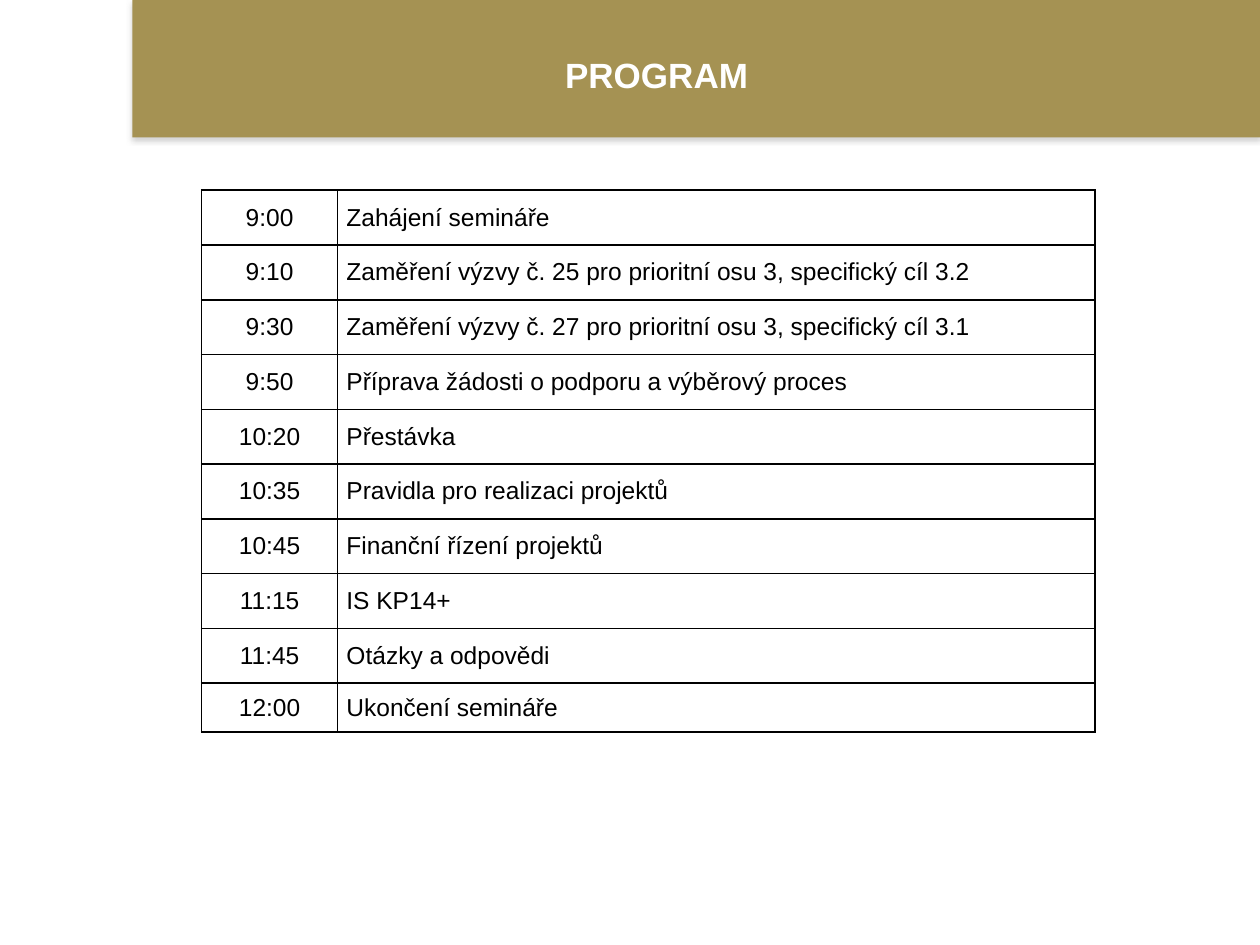
from dataclasses import dataclass

from pptx import Presentation
from pptx.dml.color import RGBColor
from pptx.enum.shapes import MSO_SHAPE
from pptx.enum.text import MSO_ANCHOR, PP_ALIGN
from pptx.oxml import parse_xml
from pptx.util import Inches, Pt

RECT = MSO_SHAPE.RECTANGLE
MID = MSO_ANCHOR.MIDDLE
LEFT, MIDST = PP_ALIGN.LEFT, PP_ALIGN.CENTER
NS = 'xmlns:a="http://schemas.openxmlformats.org/drawingml/2006/main"'


@dataclass(frozen=True)
class Theme:
    """Hold the colours, font and sizes."""
    font: str = "Arial"
    gold: str = "A59253"
    white: str = "FFFFFF"
    ink: str = "000000"
    shade: str = "808080"
    head: int = 20
    body: int = 14
    rule: int = 1


AGENDA = [
    ("9:00", "Zahájení semináře"),
    ("9:10", "Zaměření výzvy č. 25 pro prioritní osu 3, specifický cíl 3.2"),
    ("9:30", "Zaměření výzvy č. 27 pro prioritní osu 3, specifický cíl 3.1"),
    ("9:50", "Příprava žádosti o podporu a výběrový proces"),
    ("10:20", "Přestávka"),
    ("10:35", "Pravidla pro realizaci projektů"),
    ("10:45", "Finanční řízení projektů"),
    ("11:15", "IS KP14+"),
    ("11:45", "Otázky a odpovědi"),
    ("12:00", "Ukončení semináře"),
]


def write(frame, text, font, size, color, bold=False, align=LEFT, lead=None):
    """Put one formatted paragraph into a text frame."""
    para = frame.paragraphs[0]
    para.alignment = align
    if lead:
        para.line_spacing = lead
    run = para.add_run()
    run.text = text
    run.font.name, run.font.size, run.font.bold = font, Pt(size), bold
    run.font.color.rgb = RGBColor.from_string(color)


class Deck:
    """Draw on one slide with a grid of 100 columns by 75 rows."""

    def __init__(self, theme):
        """Open a blank slide."""
        self.theme = theme
        self.show = Presentation()
        self.show.slide_width, self.show.slide_height = Inches(10), Inches(7.5)
        self.slide = self.show.slides.add_slide(self.show.slide_layouts[6])

    def grid(self, *units):
        """Turn grid columns or rows into lengths."""
        return [round(self.show.slide_width * unit / 100) for unit in units]

    def band(self, *box):
        """Draw a gold band with a soft shadow."""
        shape = self.slide.shapes.add_shape(RECT, *self.grid(*box))
        shape.fill.solid()
        shape.fill.fore_color.rgb = RGBColor.from_string(self.theme.gold)
        shape.line.fill.background()
        shape.shadow.inherit = False
        shape.element.spPr[-1].append(parse_xml(
            f'<a:outerShdw {NS} blurRad="{Pt(3.1)}" dist="{Pt(1.8)}" '
            f'dir="5400000" algn="t" rotWithShape="0">'
            f'<a:srgbClr val="{self.theme.shade}"><a:alpha val="35000"/>'
            f'</a:srgbClr></a:outerShdw>'))

    def title(self, text, *box):
        """Write a centred heading."""
        frame = self.slide.shapes.add_textbox(*self.grid(*box)).text_frame
        frame.word_wrap = True
        frame.vertical_anchor = MID
        write(frame, text, self.theme.font, self.theme.head, self.theme.white,
              bold=True, align=MIDST, lead=0.9)

    def cell(self, cell, text, align):
        """Fill, rule and write one table cell."""
        theme = self.theme
        cell.margin_left = cell.margin_right = Inches(0.07)
        cell.margin_top = cell.margin_bottom = 0
        cell.vertical_anchor = MID
        props = cell._tc.get_or_add_tcPr()
        for side in "LRTB":
            props.append(parse_xml(
                f'<a:ln{side} {NS} w="{Pt(theme.rule)}"><a:solidFill>'
                f'<a:srgbClr val="{theme.ink}"/></a:solidFill></a:ln{side}>'))
        cell.fill.solid()
        cell.fill.fore_color.rgb = RGBColor.from_string(theme.white)
        write(cell.text_frame, text, theme.font, theme.body, theme.ink,
              align=align)

    def table(self, data, left, top, cols, rows):
        """Draw a ruled table of times and topics."""
        box = self.grid(left, top, sum(cols), sum(rows))
        table = self.slide.shapes.add_table(len(rows), len(cols), *box).table
        table.first_row = table.horz_banding = False
        for col, width in zip(table.columns, self.grid(*cols)):
            col.width = width
        for row, high, texts in zip(table.rows, self.grid(*rows), data):
            row.height = high
            for cell, text, align in zip(row.cells, texts, (MIDST, LEFT)):
                self.cell(cell, text, align)


def main():
    """Build and save the programme slide."""
    deck = Deck(Theme())
    deck.band(10.5, 0, 89.5, 10.9)
    deck.title("PROGRAM ", 6.6, 0.6, 91.8, 11)
    rows = [4.35] * (len(AGENDA) - 1) + [3.9]
    deck.table(AGENDA, 16, 15.1, (10.8, 60.1), rows)
    deck.show.save("out.pptx")


if __name__ == "__main__":
    main()
